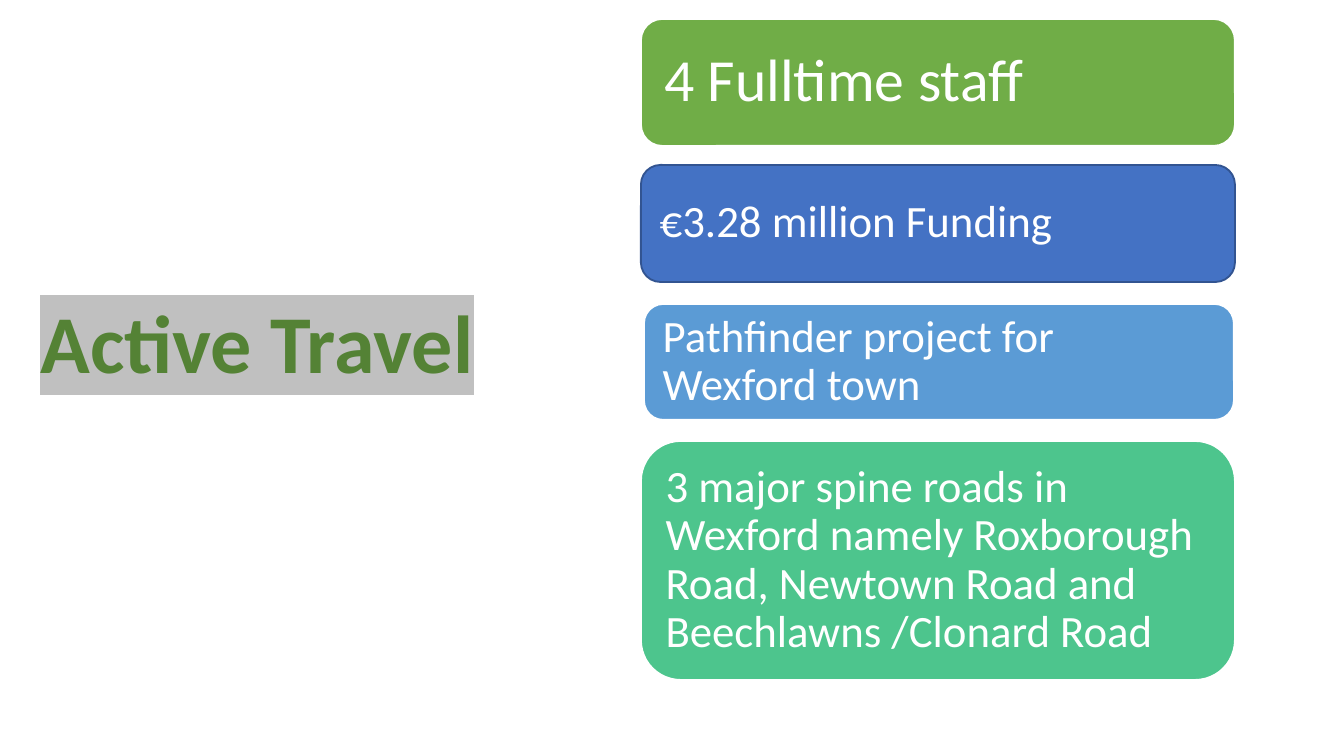
from lxml import etree
from pptx import Presentation
from pptx import util as u
from pptx.dml.color import RGBColor
from pptx.enum import shapes, text
from pptx.oxml import ns

EMU_PER_PX = 914400 / 134.4
FONT = "Calibri"
WHITE = RGBColor(0xFF, 0xFF, 0xFF)
DARK_GREEN = RGBColor(0x54, 0x82, 0x35)
GREY = RGBColor(0xC0, 0xC0, 0xC0)
GREEN = RGBColor(0x70, 0xAD, 0x47)
BLUE = RGBColor(0x44, 0x72, 0xC4)
NAVY = RGBColor(0x32, 0x54, 0x91)
LIGHT_BLUE = RGBColor(0x5B, 0x9B, 0xD5)
TEAL = RGBColor(0x4D, 0xC5, 0x8D)

# text, box (left, top, width, height), fill, line, font size, text inset
BARS = [
    ("4 Fulltime staff", (641, 19, 594, 127), GREEN, WHITE, 32, 17),
    ("€3.28 million Funding", (641, 165, 594, 117), BLUE, NAVY, 24, 13),
    ("Pathfinder project for Wexford town", (644, 304, 590, 116),
     LIGHT_BLUE, WHITE, 24, 13),
    ("3 major spine roads in Wexford namely Roxborough Road, Newtown Road "
     "and Beechlawns /Clonard Road", (641, 441, 594, 239),
     TEAL, WHITE, 24, 13),
]


def px(value):
    return u.Emu(round(value * EMU_PER_PX))


def format_paragraph(paragraph, size, color, bold=False):
    paragraph.alignment = text.PP_ALIGN.LEFT
    paragraph.line_spacing = 0.9
    for run in paragraph.runs:
        run.font.name = FONT
        run.font.size = u.Pt(size)
        run.font.bold = bold
        run.font.color.rgb = color


def highlight(run, color):
    mark = etree.Element(ns.qn("a:highlight"))
    etree.SubElement(mark, ns.qn("a:srgbClr"), val=str(color))
    run.font.fill._xPr.find(ns.qn("a:solidFill")).addnext(mark)


def add_title(slide):
    title = slide.shapes.title
    title.left, title.top, title.width, title.height = map(
        px, (27, 223, 466, 310))
    frame = title.text_frame
    frame.text = "Active Travel\v"
    frame.word_wrap = True
    frame.auto_size = text.MSO_AUTO_SIZE.NONE
    frame.vertical_anchor = text.MSO_ANCHOR.MIDDLE
    paragraph = frame.paragraphs[0]
    format_paragraph(paragraph, 44, DARK_GREEN, bold=True)
    highlight(paragraph.runs[0], GREY)
    # The line after the break is smaller than the heading
    etree.SubElement(paragraph._p, ns.qn("a:endParaRPr"), sz="2800")


def add_bar(slide, label, box, fill, line, size, inset):
    bar = slide.shapes.add_shape(
        shapes.MSO_SHAPE.ROUNDED_RECTANGLE, *map(px, box))
    bar.shadow.inherit = False
    bar.fill.solid()
    bar.fill.fore_color.rgb = fill
    bar.line.color.rgb = line
    bar.line.width = u.Pt(1)
    frame = bar.text_frame
    frame.text = label
    frame.word_wrap = True
    frame.vertical_anchor = text.MSO_ANCHOR.MIDDLE
    frame.margin_left = frame.margin_right = px(inset)
    frame.margin_top = frame.margin_bottom = px(inset)
    format_paragraph(frame.paragraphs[0], size, WHITE)


def main():
    presentation = Presentation()
    presentation.slide_width = px(1344)
    presentation.slide_height = px(756)
    slide = presentation.slides.add_slide(presentation.slide_layouts[5])

    # Heading on the left
    add_title(slide)

    # Stack of facts on the right
    for bar in BARS:
        add_bar(slide, *bar)

    presentation.save("out.pptx")


if __name__ == "__main__":
    main()
